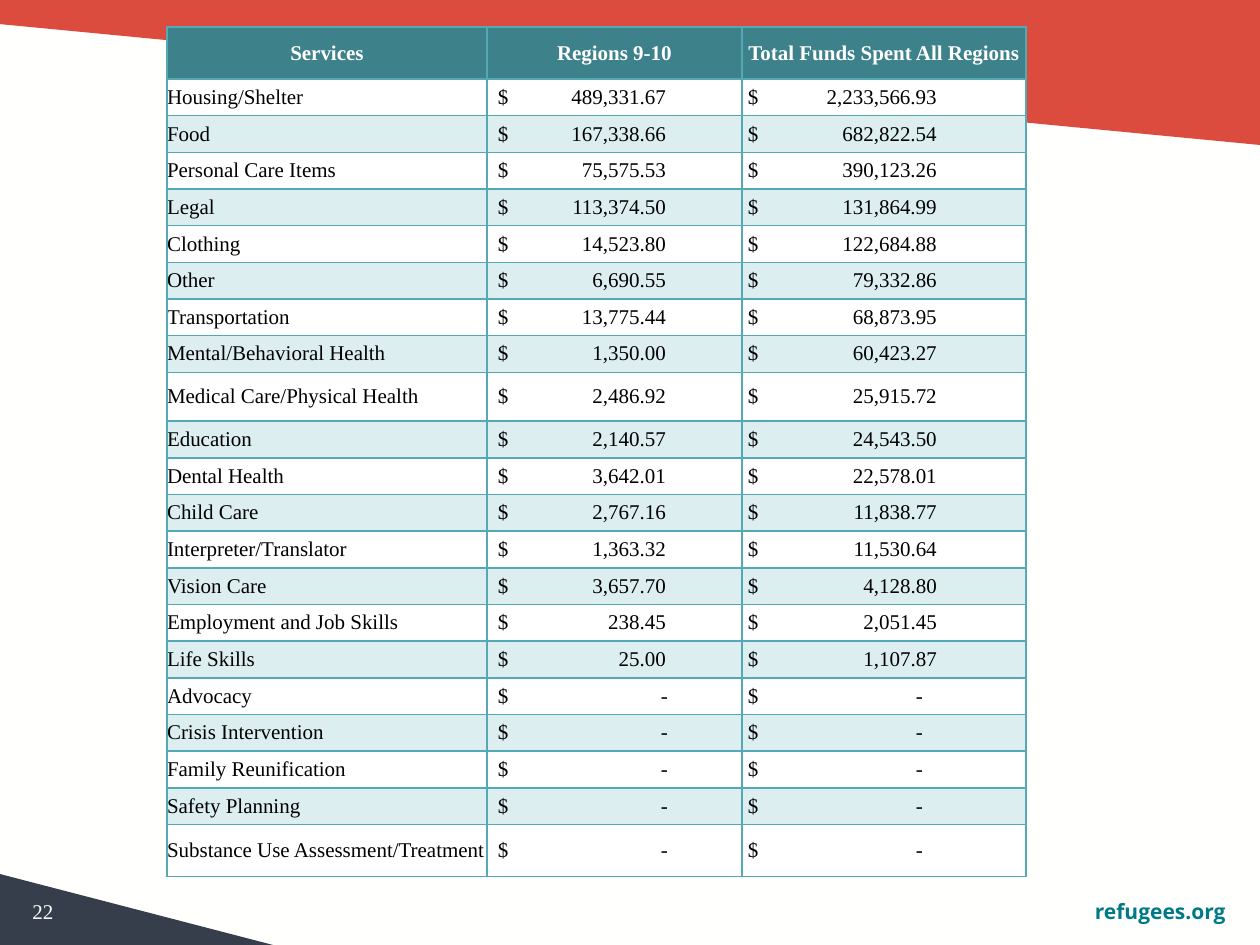
from lxml import etree
from pptx import Presentation
from pptx import util as u
from pptx.dml.color import RGBColor
from pptx.enum import text
from pptx.oxml import ns

PX = u.Inches(1) / 126
OFF_WHITE = RGBColor(0xFF, 0xFF, 0xFE)
WHITE = RGBColor(0xFF, 0xFF, 0xFF)
BLACK = RGBColor(0, 0, 0)
RED = RGBColor(0xDB, 0x4C, 0x3F)
NAVY = RGBColor(0x35, 0x3E, 0x4A)
TEAL = RGBColor(0x00, 0x7A, 0x88)
HEADER_TEAL = RGBColor(0x3D, 0x81, 0x8B)
BAND_TEAL = RGBColor(0xDD, 0xEE, 0xF0)
BORDER_TEAL = RGBColor(0x55, 0xA9, 0xB5)
SERIF = "Times New Roman"

HEADERS = ("Services", "Regions 9-10", "Total Funds Spent All Regions")
SERVICES = [
    ("Housing/Shelter", "489,331.67", "2,233,566.93"),
    ("Food", "167,338.66", "682,822.54"),
    ("Personal Care Items", "75,575.53", "390,123.26"),
    ("Legal", "113,374.50", "131,864.99"),
    ("Clothing", "14,523.80", "122,684.88"),
    ("Other", "6,690.55", "79,332.86"),
    ("Transportation", "13,775.44", "68,873.95"),
    ("Mental/Behavioral Health", "1,350.00", "60,423.27"),
    ("Medical Care/Physical Health", "2,486.92", "25,915.72"),
    ("Education", "2,140.57", "24,543.50"),
    ("Dental Health", "3,642.01", "22,578.01"),
    ("Child Care", "2,767.16", "11,838.77"),
    ("Interpreter/Translator", "1,363.32", "11,530.64"),
    ("Vision Care", "3,657.70", "4,128.80"),
    ("Employment and Job Skills", "238.45", "2,051.45"),
    ("Life Skills", "25.00", "1,107.87"),
    ("Advocacy", "-", "-"),
    ("Crisis Intervention", "-", "-"),
    ("Family Reunification", "-", "-"),
    ("Safety Planning", "-", "-"),
    ("Substance Use Assessment/Treatment", "-", "-"),
]
COLUMN_WIDTHS = (320, 255, 284)
TABLE_HEIGHT = 850
TALL_ROWS = {0: 52, 9: 49, 21: 52}
# Per column: left inset, right edge of an amount, right edge of a dash
INSETS = (0, 11, 6)
AMOUNT_EDGES = (0, 179, 195)
DASH_EDGES = (0, 181, 181)


def px(length):
    return u.Emu(round(length * PX))


def style_text(paragraph, color, bold=False, font=SERIF):
    for run in paragraph.runs:
        run.font.name = font
        run.font.size = u.Pt(12)
        run.font.bold = bold
        run.font.color.rgb = color


presentation = Presentation()
presentation.slide_width = u.Inches(10)
presentation.slide_height = u.Inches(7.5)
slide = presentation.slides.add_slide(presentation.slide_layouts[6])
slide.background.fill.solid()
slide.background.fill.fore_color.rgb = OFF_WHITE

# Corner wedges
for color, start, *points in (
    (NAVY, (0, 874), (277, 946), (-2, 946)),
    (RED, (-1, 24), (1260, 145), (1264, -2), (-2, -2)),
):
    builder = slide.shapes.build_freeform(*start, scale=PX)
    builder.add_line_segments(points, close=True)
    wedge = builder.convert_to_shape()
    wedge.shadow.inherit = False
    wedge.fill.solid()
    wedge.fill.fore_color.rgb = color
    wedge.line.fill.background()

# Footer: web address and slide number
for left, wording, alignment, color, bold, font in (
    (944, "refugees.org", text.PP_ALIGN.RIGHT, TEAL, True, "Open Sans"),
    (20, "22", text.PP_ALIGN.LEFT, OFF_WHITE, False, SERIF),
):
    box = slide.shapes.add_textbox(px(left), px(886), px(294), px(50))
    frame = box.text_frame
    frame.word_wrap = True
    frame.vertical_anchor = text.MSO_ANCHOR.MIDDLE
    frame.text = wording
    frame.paragraphs[0].alignment = alignment
    style_text(frame.paragraphs[0], color, bold, font)

# Services table
rows = [HEADERS] + SERVICES
table = slide.shapes.add_table(
    len(rows), len(HEADERS), px(167), px(27), px(sum(COLUMN_WIDTHS)), px(TABLE_HEIGHT)
).table
table.first_row = False
table.horz_banding = False
for column, width in zip(table.columns, COLUMN_WIDTHS):
    column.width = px(width)
row_height = (TABLE_HEIGHT - sum(TALL_ROWS.values())) / (len(rows) - len(TALL_ROWS))

for r, values in enumerate(rows):
    table.rows[r].height = px(TALL_ROWS.get(r, row_height))
    is_header = r == 0
    for c, value in enumerate(values):
        is_amount = c > 0 and not is_header
        cell = table.cell(r, c)
        cell.margin_right = cell.margin_top = cell.margin_bottom = 0
        cell.margin_left = px(INSETS[c]) if is_amount else 0
        cell.vertical_anchor = text.MSO_ANCHOR.MIDDLE

        properties = cell._tc.get_or_add_tcPr()
        for side in ("lnL", "lnR", "lnT", "lnB"):
            line = etree.SubElement(properties, ns.qn(f"a:{side}"), w=str(u.Pt(1)))
            fill = etree.SubElement(line, ns.qn("a:solidFill"))
            etree.SubElement(fill, ns.qn("a:srgbClr"), val=str(BORDER_TEAL))
        cell.fill.solid()
        cell.fill.fore_color.rgb = (
            HEADER_TEAL if is_header else WHITE if r % 2 else BAND_TEAL
        )

        paragraph = cell.text_frame.paragraphs[0]
        paragraph.text = f"$\t{value}" if is_amount else value
        paragraph.alignment = text.PP_ALIGN.CENTER if is_header else text.PP_ALIGN.LEFT
        if is_amount:
            edge = (DASH_EDGES if value == "-" else AMOUNT_EDGES)[c]
            tabs = etree.SubElement(paragraph._p.get_or_add_pPr(), ns.qn("a:tabLst"))
            etree.SubElement(
                tabs, ns.qn("a:tab"), pos=str(px(edge - INSETS[c])), algn="r"
            )
        style_text(paragraph, WHITE if is_header else BLACK, is_header)

presentation.save("out.pptx")
